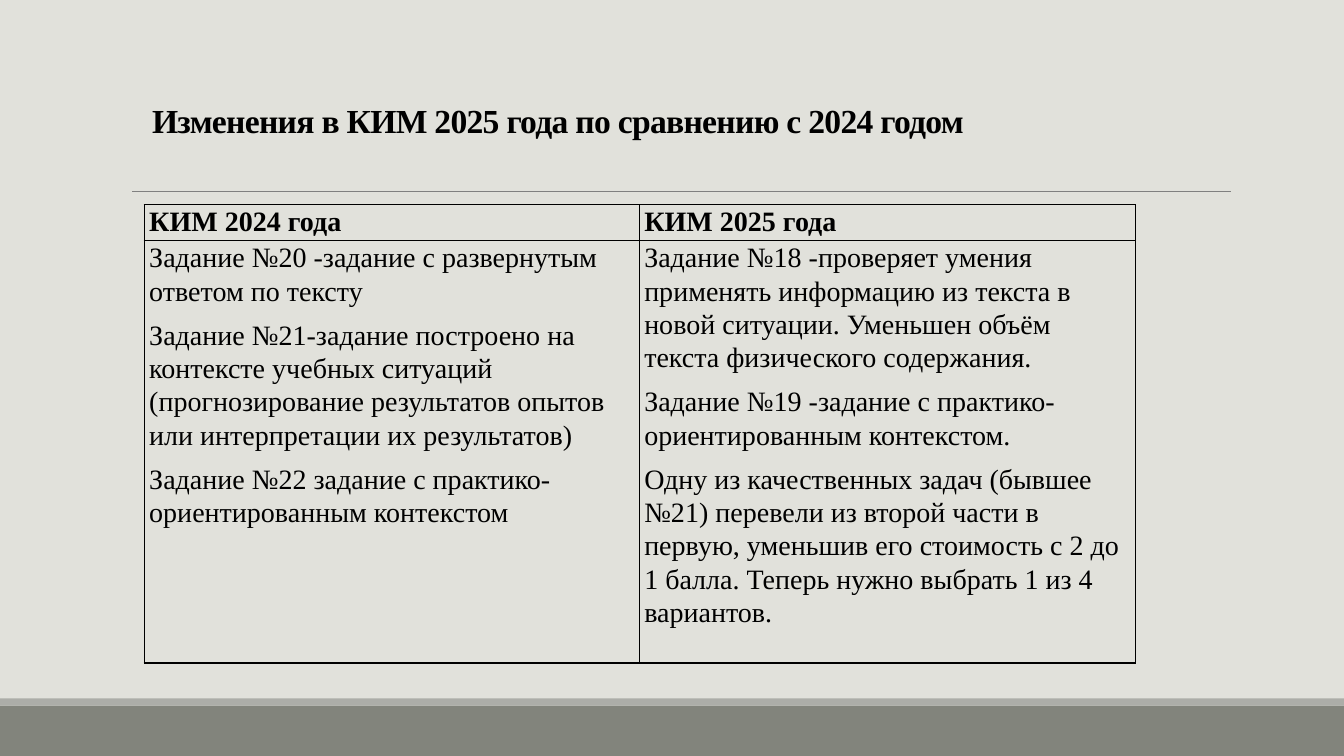
from dataclasses import dataclass

from lxml import etree
from pptx import Presentation
from pptx.dml.color import RGBColor
from pptx.enum import shapes, text
from pptx.oxml import ns
from pptx.util import Inches, Pt

COLORS = {
    "background": "E1E1DB",
    "footer": "82847C",
    "footer_edge": "ACADA8",
    "rule": "808080",
    "ink": "000000",
}
FONT = "Times New Roman"
BORDER_PT = 1


@dataclass(frozen=True)
class Band:
    top: float
    height: float
    color: str


@dataclass(frozen=True)
class ExamYear:
    heading: str
    width: float
    tasks: tuple[str, ...]


BANDS = (Band(7, 0.5, "footer"), Band(6.93, 0.07, "footer_edge"))
HEADLINE = "Изменения в КИМ 2025 года по сравнению с 2024 годом"
ROW_HEIGHTS = (0.34, 4.19)
YEARS = (
    ExamYear("КИМ 2024 года", 4.91, (
        "Задание №20 -задание с развернутым ответом по тексту",
        "Задание №21-задание построено на контексте учебных ситуаций "
        "(прогнозирование результатов опытов или интерпретации их результатов)",
        "Задание №22 задание с практико-ориентированным контекстом",
    )),
    ExamYear("КИМ 2025 года", 4.92, (
        "Задание №18 -проверяет умения применять информацию из текста в новой "
        "ситуации. Уменьшен объём текста физического содержания.",
        "Задание №19 -задание с практико-ориентированным контекстом.",
        "Одну из качественных задач (бывшее №21) перевели из второй части в "
        "первую, уменьшив его стоимость с 2 до 1 балла. Теперь нужно выбрать "
        "1 из 4 вариантов.",
    )),
)
CELL_FORMAT = {
    "margin_left": Inches(0.05),
    "margin_right": Inches(0.05),
    "margin_top": 0,
    "margin_bottom": 0,
    "vertical_anchor": text.MSO_ANCHOR.TOP,
}
PARAGRAPH_FORMAT = {"line_spacing": 1.07, "space_after": Pt(8)}


def rgb(name: str) -> RGBColor:
    return RGBColor.from_string(COLORS[name])


def apply_format(target, values: dict) -> None:
    for attribute, value in values.items():
        setattr(target, attribute, value)


def add_run(paragraph, content: str, size: float, bold: bool):
    run = paragraph.add_run()
    run.text = content
    apply_format(run.font, {"name": FONT, "size": Pt(size), "bold": bold})
    run.font.color.rgb = rgb("ink")
    return run


def add_band(slide, band: Band, width: int) -> None:
    strip = slide.shapes.add_shape(
        shapes.MSO_SHAPE.RECTANGLE, 0, Inches(band.top), width, Inches(band.height))
    strip.shadow.inherit = False
    strip.fill.solid()
    strip.fill.fore_color.rgb = rgb(band.color)
    strip.line.fill.background()


def add_rule(slide) -> None:
    """Draw the thin line under the headline."""
    rule = slide.shapes.add_connector(
        shapes.MSO_CONNECTOR.STRAIGHT,
        Inches(1.31), Inches(1.9), Inches(12.21), Inches(1.9))
    rule.line.color.rgb = rgb("rule")
    rule.line.width = Pt(0.5)
    etree.SubElement(rule._element.spPr, ns.qn("a:effectLst"))


def add_headline(slide) -> None:
    headline = slide.shapes.add_textbox(
        Inches(1.41), Inches(0.94), Inches(8.33), Inches(0.5))
    frame = headline.text_frame
    apply_format(frame, {
        "word_wrap": False,
        "vertical_anchor": text.MSO_ANCHOR.MIDDLE,
        "auto_size": text.MSO_AUTO_SIZE.SHAPE_TO_FIT_TEXT,
    })
    run = add_run(frame.paragraphs[0], HEADLINE, 24, True)
    run._r.get_or_add_rPr().set("spc", "-50")


def add_borders(cell) -> None:
    properties = cell._tc.get_or_add_tcPr()
    for side in ("lnL", "lnR", "lnT", "lnB"):
        line = etree.SubElement(
            properties, ns.qn(f"a:{side}"), w=str(Pt(BORDER_PT)))
        fill = etree.SubElement(line, ns.qn("a:solidFill"))
        etree.SubElement(fill, ns.qn("a:srgbClr"), val=COLORS["ink"])


def fill_cell(cell, paragraphs: tuple[str, ...], bold: bool) -> None:
    apply_format(cell, CELL_FORMAT)
    add_borders(cell)
    cell.fill.background()
    frame = cell.text_frame
    for index, content in enumerate(paragraphs):
        paragraph = frame.add_paragraph() if index else frame.paragraphs[0]
        apply_format(paragraph, PARAGRAPH_FORMAT)
        add_run(paragraph, content, 20, bold)


def add_comparison(slide) -> None:
    comparison = slide.shapes.add_table(
        len(ROW_HEIGHTS), len(YEARS), Inches(1.43), Inches(2.03),
        Inches(sum(year.width for year in YEARS)),
        Inches(sum(ROW_HEIGHTS))).table
    apply_format(comparison, {"first_row": False, "horz_banding": False})
    for row, height in zip(comparison.rows, ROW_HEIGHTS):
        row.height = Inches(height)
    for column, year in enumerate(YEARS):
        comparison.columns[column].width = Inches(year.width)
        fill_cell(comparison.cell(0, column), (year.heading,), True)
        fill_cell(comparison.cell(1, column), year.tasks, False)


def main() -> None:
    deck = Presentation()
    deck.slide_width, deck.slide_height = Inches(13.33), Inches(7.5)
    slide = deck.slides.add_slide(deck.slide_layouts[6])
    slide.background.fill.solid()
    slide.background.fill.fore_color.rgb = rgb("background")
    for band in BANDS:
        add_band(slide, band, deck.slide_width)
    add_rule(slide)
    add_headline(slide)
    add_comparison(slide)
    deck.save("out.pptx")


if __name__ == "__main__":
    main()
